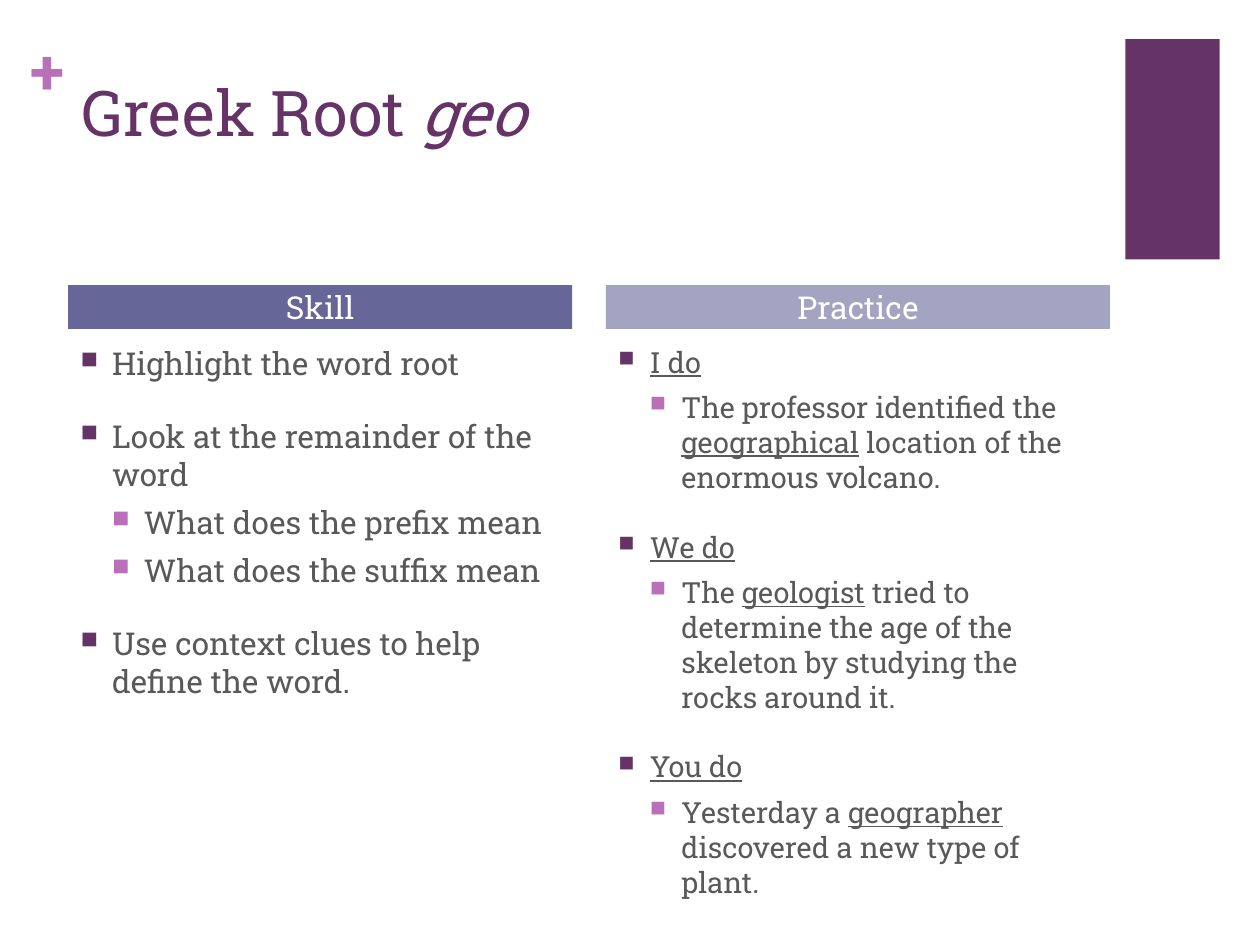
from lxml import etree
from pptx import Presentation
from pptx.dml.color import RGBColor
from pptx.enum import shapes, text
from pptx.oxml.ns import qn
from pptx.util import Pt

PLUM = RGBColor(0x66, 0x33, 0x66)
ORCHID = RGBColor(0xB8, 0x70, 0xB8)
INDIGO = RGBColor(0x66, 0x66, 0x99)
LAVENDER = RGBColor(0xA3, 0xA3, 0xC2)
GREY = RGBColor(0x59, 0x59, 0x59)
WHITE = RGBColor(0xFF, 0xFF, 0xFF)
FONT = "Roboto Slab"

# Bullet colour and space before, by level
LEVELS = [(PLUM, 20), (ORCHID, 6)]

# (level, text); words between underscores are underlined
SKILL = [
    (0, "Highlight the word root"),
    (0, "Look at the remainder of the word"),
    (1, "What does the prefix mean"),
    (1, "What does the suffix mean"),
    (0, "Use context clues to help define the word."),
]
PRACTICE = [
    (0, "_I do_"),
    (1, "The professor identified the _geographical_ location of the enormous volcano."),
    (0, "_We do_"),
    (1, "The _geologist_ tried to determine the age of the skeleton "
        "by studying the rocks around it."),
    (0, "_You do_"),
    (1, "Yesterday a _geographer_ discovered a new type of plant."),
]


def set_all(obj, **values):
    for name, value in values.items():
        setattr(obj, name, value)


def add_run(p, words, size, color, **style):
    r = p.add_run()
    r.text = words
    set_all(r.font, name=FONT, size=Pt(size), **style)
    r.font.color.rgb = color


def add_block(s, x, y, w, h, color):
    sp = s.shapes.add_shape(shapes.MSO_SHAPE.RECTANGLE, Pt(x), Pt(y), Pt(w), Pt(h))
    sp.shadow.inherit = False
    sp.fill.solid()
    sp.fill.fore_color.rgb = color
    sp.line.fill.background()
    return sp


def set_bullet(p, level):
    color, before = LEVELS[level]
    p.level = level
    p.space_before = Pt(before)
    pPr = p._p.get_or_add_pPr()
    pPr.set("marL", str(Pt(18 * (level + 1))))
    pPr.set("indent", str(Pt(-18)))
    clr = etree.SubElement(pPr, qn("a:buClr"))
    etree.SubElement(clr, qn("a:srgbClr"), val=str(color))
    etree.SubElement(pPr, qn("a:buSzPct"), val="75000")
    etree.SubElement(pPr, qn("a:buChar"), char="■")


def add_decoration(s):
    """Corner block and plus sign."""
    add_block(s, 643, 22.3, 54, 126, PLUM)
    tf = s.shapes.add_textbox(Pt(17.3), Pt(18), Pt(21), Pt(44)).text_frame
    set_all(tf, margin_left=0, margin_top=0, margin_right=0, margin_bottom=0,
            auto_size=text.MSO_AUTO_SIZE.SHAPE_TO_FIT_TEXT)
    add_run(tf.paragraphs[0], "+", 36, ORCHID, bold=True)


def fill_title(s, x, y, w, h):
    title = s.shapes.title
    set_all(title, left=Pt(x), top=Pt(y), width=Pt(w), height=Pt(h))
    set_all(title.text_frame, vertical_anchor=text.MSO_ANCHOR.TOP,
            auto_size=text.MSO_AUTO_SIZE.NONE)
    p = title.text_frame.paragraphs[0]
    p.alignment = text.PP_ALIGN.LEFT
    add_run(p, "Greek Root ", 36, PLUM)
    add_run(p, "geo", 36, PLUM, italic=True)


def add_column(s, x, y, w, heading, color, items, size):
    """Heading bar with a bulleted list below it."""
    tf = add_block(s, x, y, w, 25, color).text_frame
    set_all(tf, margin_top=0, margin_bottom=0, word_wrap=True,
            vertical_anchor=text.MSO_ANCHOR.MIDDLE)
    tf.paragraphs[0].alignment = text.PP_ALIGN.CENTER
    add_run(tf.paragraphs[0], heading, 18, WHITE)

    tf = s.shapes.add_textbox(Pt(x), Pt(y + 30), Pt(w), Pt(289.5)).text_frame
    tf.word_wrap = True
    for i, (level, words) in enumerate(items):
        p = tf.add_paragraph() if i else tf.paragraphs[0]
        set_bullet(p, level)
        for k, part in enumerate(words.split("_")):
            if part:
                add_run(p, part, size, GREY, underline=k % 2 == 1)


def main():
    prs = Presentation()
    set_all(prs, slide_width=Pt(720), slide_height=Pt(540))
    s = prs.slides.add_slide(prs.slide_layouts[5])
    add_decoration(s)
    fill_title(s, 39.6, 38.2, 594.7, 87.8)
    add_column(s, 39, 163, 288, "Skill", INDIGO, SKILL, 18)
    add_column(s, 346.3, 163, 288, "Practice", LAVENDER, PRACTICE, 16.6)
    prs.save("out.pptx")


if __name__ == "__main__":
    main()
